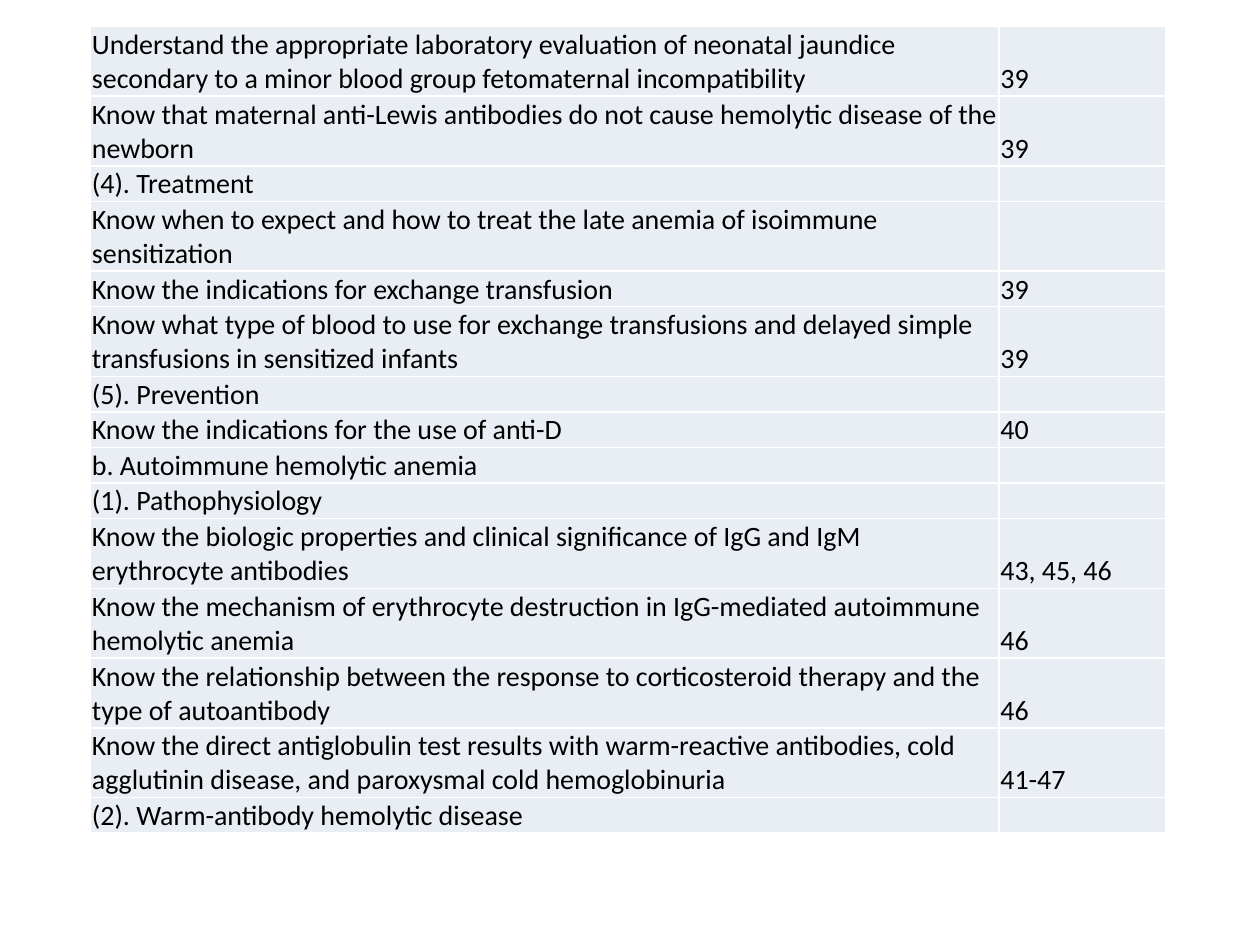
import pptx
import pptx.dml.color
import pptx.enum.text
import pptx.oxml.ns
import pptx.util
from lxml import etree

Inches = pptx.util.Inches
Pt = pptx.util.Pt
RGBColor = pptx.dml.color.RGBColor
qn = pptx.oxml.ns.qn

COLORS = {"fill": "E9EDF4", "border": "FFFFFF", "text": "000000"}
ONE_LINE, TWO_LINES = 0.28, 0.55

objectives = [
    ("Understand the appropriate laboratory evaluation of neonatal jaundice secondary to a minor blood group fetomaternal incompatibility", "39", TWO_LINES),
    ("Know that maternal anti-Lewis antibodies do not cause hemolytic disease of the newborn", "39", TWO_LINES),
    ("(4). Treatment", "", ONE_LINE),
    ("Know when to expect and how to treat the late anemia of isoimmune sensitization", "", TWO_LINES),
    ("Know the indications for exchange transfusion", "39", ONE_LINE),
    ("Know what type of blood to use for exchange transfusions and delayed simple transfusions in sensitized infants", "39", TWO_LINES),
    ("(5). Prevention", "", ONE_LINE),
    ("Know the indications for the use of anti-D", "40", ONE_LINE),
    ("b. Autoimmune hemolytic anemia", "", ONE_LINE),
    ("(1). Pathophysiology", "", ONE_LINE),
    ("Know the biologic properties and clinical significance of IgG and IgM erythrocyte antibodies", "43, 45, 46", TWO_LINES),
    ("Know the mechanism of erythrocyte destruction in IgG-mediated autoimmune hemolytic anemia", "46", TWO_LINES),
    ("Know the relationship between the response to corticosteroid therapy and the type of autoantibody", "46", TWO_LINES),
    ("Know the direct antiglobulin test results with warm-reactive antibodies, cold agglutinin disease, and paroxysmal cold hemoglobinuria", "41-47", TWO_LINES),
    ("(2). Warm-antibody hemolytic disease", "", ONE_LINE),
]


def add_borders(cell):
    properties = cell._tc.get_or_add_tcPr()
    for side in ("lnL", "lnR", "lnT", "lnB"):
        line = etree.SubElement(properties, qn(f"a:{side}"), w=str(Pt(1)))
        solid = etree.SubElement(line, qn("a:solidFill"))
        etree.SubElement(solid, qn("a:srgbClr"), val=COLORS["border"])


deck = pptx.Presentation()
deck.slide_width = Inches(10)
deck.slide_height = Inches(7.5)
page = deck.slides.add_slide(deck.slide_layouts[6])

total_height = sum(height for _, _, height in objectives)
table = page.shapes.add_table(
    len(objectives), 2, Inches(0.72), Inches(0.21), Inches(8.53), Inches(total_height)
).table
table.first_row = False
table.horz_banding = False
table.columns[0].width = Inches(7.21)
table.columns[1].width = Inches(1.32)

for row_index, (objective, slide_numbers, height) in enumerate(objectives):
    table.rows[row_index].height = Inches(height)
    for column_index, text in enumerate((objective, slide_numbers)):
        cell = table.cell(row_index, column_index)
        cell.margin_left = cell.margin_top = cell.margin_right = Inches(0.01)
        cell.margin_bottom = 0
        cell.vertical_anchor = pptx.enum.text.MSO_ANCHOR.BOTTOM
        add_borders(cell)
        cell.fill.solid()
        cell.fill.fore_color.rgb = RGBColor.from_string(COLORS["fill"])
        para = cell.text_frame.paragraphs[0]
        if text:
            span = para.add_run()
            span.text = text
            span.font.name = "Calibri"
            span.font.size = Pt(16)
            span.font.color.rgb = RGBColor.from_string(COLORS["text"])
        else:
            etree.SubElement(para._p, qn("a:endParaRPr"), sz="1600")

deck.save("out.pptx")
